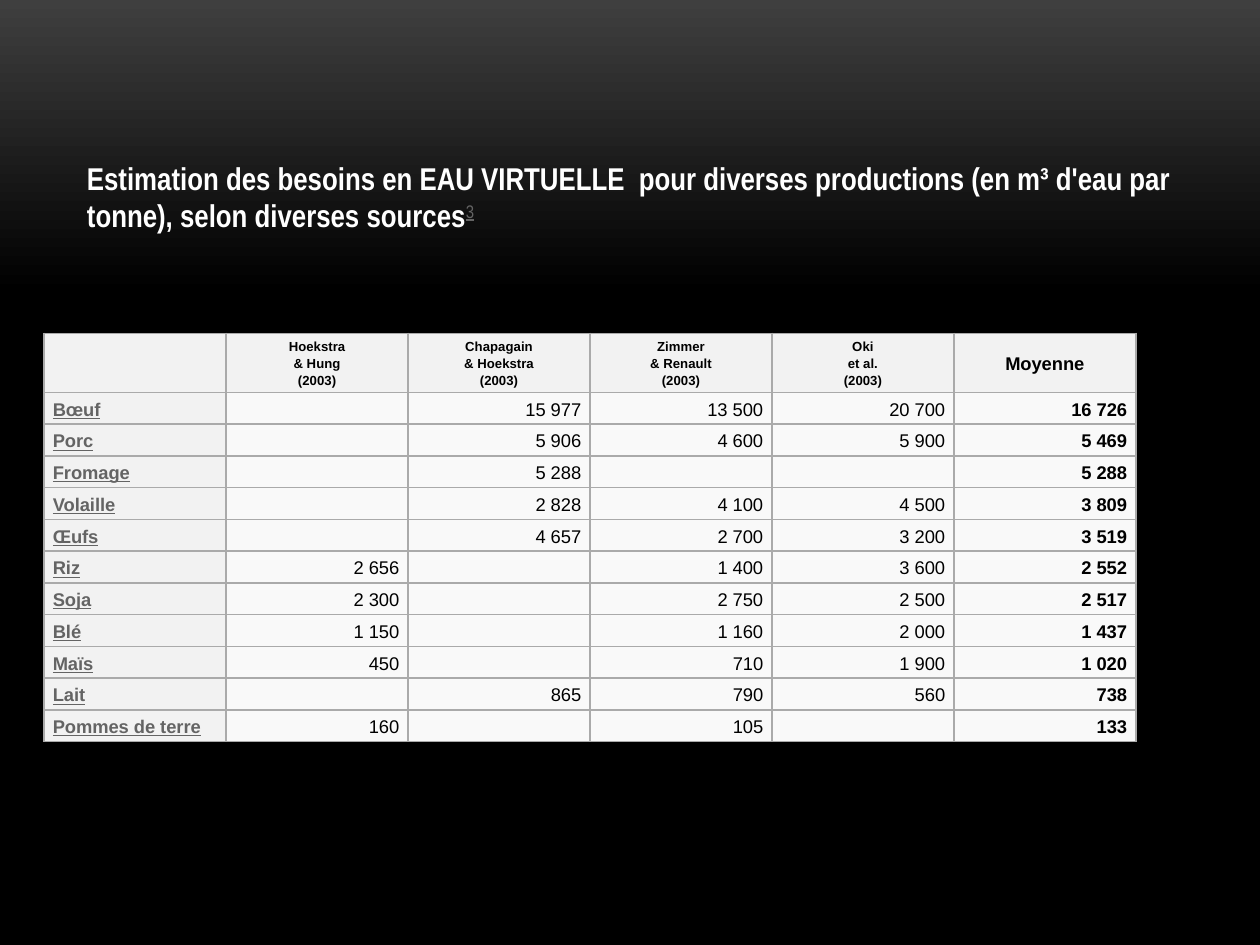
"""Build the slide on virtual water needs by product."""
from lxml.etree import SubElement
from pptx import Presentation
from pptx.dml.color import RGBColor
from pptx.enum.text import MSO_ANCHOR, PP_ALIGN
from pptx.oxml.ns import qn
from pptx.util import Pt

COLORS = {
    "top": "3F3F3F", "black": "000000", "white": "FFFFFF", "link": "646464",
    "header": "F2F2F2", "body": "F9F9F9", "border": "AAAAAA",
}
HEADERS = ["", "Hoekstra\n& Hung\n(2003)", "Chapagain\n& Hoekstra\n(2003)",
           "Zimmer\n& Renault\n(2003)", "Oki\net al.\n(2003)", "Moyenne"]
PRODUCTS = [
    ["Bœuf", "", "15 977", "13 500", "20 700", "16 726"],
    ["Porc", "", "5 906", "4 600", "5 900", "5 469"],
    ["Fromage", "", "5 288", "", "", "5 288"],
    ["Volaille", "", "2 828", "4 100", "4 500", "3 809"],
    ["Œufs", "", "4 657", "2 700", "3 200", "3 519"],
    ["Riz", "2 656", "", "1 400", "3 600", "2 552"],
    ["Soja", "2 300", "", "2 750", "2 500", "2 517"],
    ["Blé", "1 150", "", "1 160", "2 000", "1 437"],
    ["Maïs", "450", "", "710", "1 900", "1 020"],
    ["Lait", "", "865", "790", "560", "738"],
    ["Pommes de terre", "160", "", "105", "", "133"],
]


def write(para, text, font="Arial", size=10.5, color="black", bold=False, underline=False):
    for number, line in enumerate(text.split("\n")):
        if number:
            para.add_line_break()
        span = para.add_run()
        span.text = line
        span.font.name = font
        span.font.size = Pt(size)
        span.font.bold = bold
        span.font.underline = underline
        span.font.color.rgb = RGBColor.from_string(COLORS[color])
    for line_break in para._p.findall(qn("a:br")):
        SubElement(line_break, qn("a:rPr"), sz=str(int(size * 100)))
    return span


def add_borders(cell, color="border", width=1):
    properties = cell._tc.get_or_add_tcPr()
    for side in ("lnL", "lnR", "lnT", "lnB"):
        line = SubElement(properties, qn(f"a:{side}"), w=str(Pt(width)))
        SubElement(SubElement(line, qn("a:solidFill")), qn("a:srgbClr"), val=COLORS[color])


deck = Presentation()
deck.slide_width, deck.slide_height = Pt(720), Pt(540)
page = deck.slides.add_slide(deck.slide_layouts[5])

backdrop = page.background.fill
backdrop.gradient()
backdrop.gradient_angle = 270
for stop, color, position in zip(backdrop.gradient_stops, ("top", "black"), (0, 0.31)):
    stop.color.rgb = RGBColor.from_string(COLORS[color])
    stop.position = position

title = page.shapes.title
title.left, title.top, title.width, title.height = Pt(42.5), Pt(21), Pt(646.5), Pt(116.5)
title.text_frame.word_wrap = True
title.text_frame.vertical_anchor = MSO_ANCHOR.BOTTOM
para = title.text_frame.paragraphs[0]
para.alignment = PP_ALIGN.LEFT
write(para, "Estimation des besoins en EAU VIRTUELLE  pour diverses productions "
      "(en m³ d'eau par tonne), selon diverses sources",
      font="Arial Narrow", size=18, color="white", bold=True)
note = write(para, "3", font="Arial Narrow", size=18, color="link", underline=True)
note.font._element.set("baseline", "30000")

rows = [HEADERS] + PRODUCTS
frame = page.shapes.add_table(len(rows), len(HEADERS), Pt(25.2), Pt(190.5), Pt(624), Pt(233.65))
table = frame.table
table.first_row = table.horz_banding = False
for row_index, values in enumerate(rows):
    is_header = row_index == 0
    table.rows[row_index].height = Pt(33.8 if is_header else 18.17)
    for column, text in enumerate(values):
        is_label = column == 0
        cell = table.cell(row_index, column)
        cell.margin_left = cell.margin_right = Pt(5)
        cell.margin_top = cell.margin_bottom = Pt(2.1)
        cell.vertical_anchor = MSO_ANCHOR.MIDDLE
        add_borders(cell)
        cell.fill.solid()
        shade = "header" if is_header or is_label else "body"
        cell.fill.fore_color.rgb = RGBColor.from_string(COLORS[shade])
        para = cell.text_frame.paragraphs[0]
        if not text:
            SubElement(para._p, qn("a:endParaRPr"), sz="1050")
            continue
        para.line_spacing = 1.15
        para.space_after = Pt(12)
        if is_header:
            para.alignment = PP_ALIGN.CENTER
            write(para, text, size=7.5 if "\n" in text else 10.5, bold=True)
        elif is_label:
            para.alignment = PP_ALIGN.LEFT
            write(para, text, color="link", bold=True, underline=True)
        else:
            para.alignment = PP_ALIGN.RIGHT
            write(para, text, bold=column == len(HEADERS) - 1)

deck.save("out.pptx")
